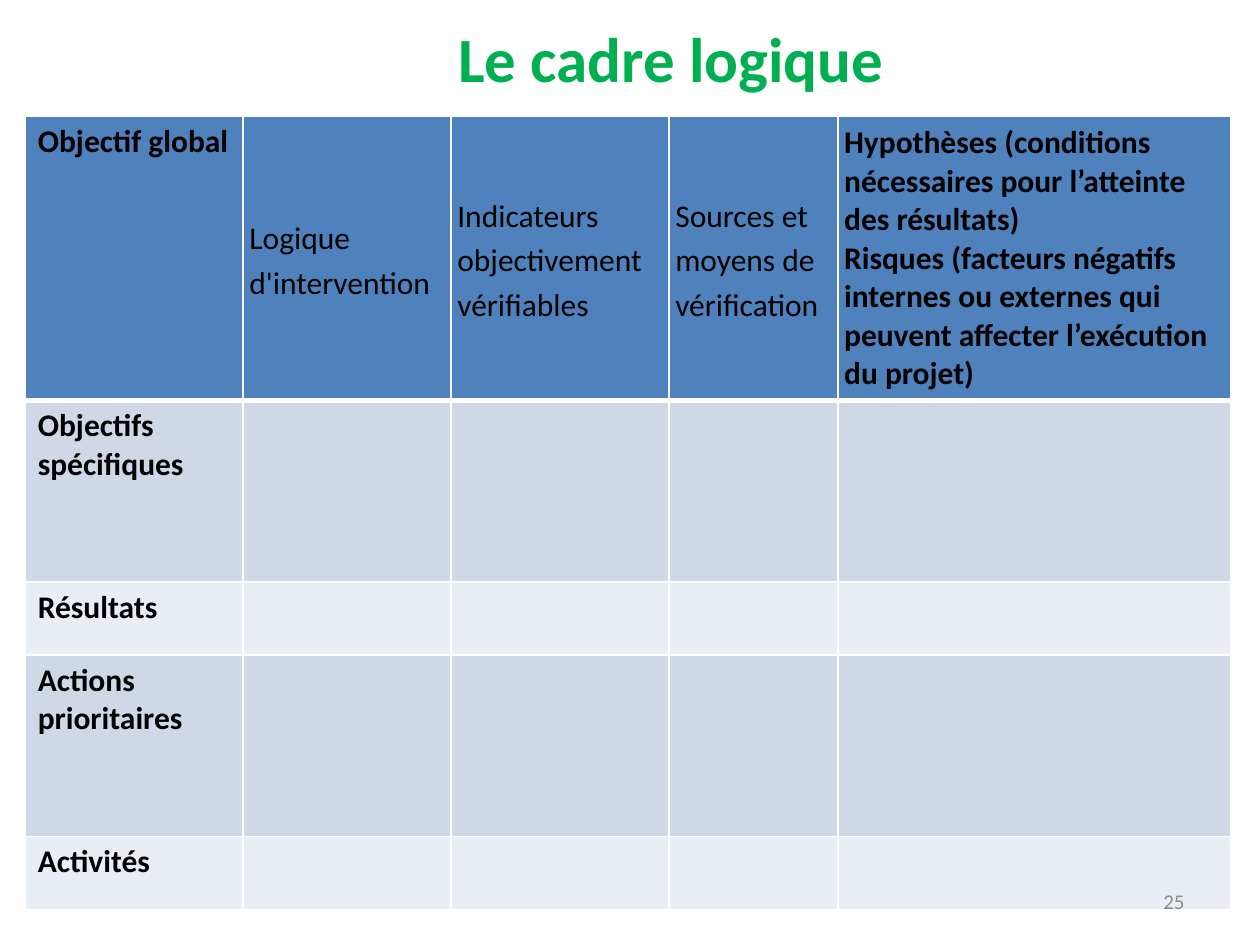
from dataclasses import dataclass

from lxml import etree
from pptx import Presentation
from pptx.dml.color import RGBColor
from pptx.enum import text
from pptx.oxml import ns
from pptx.util import Inches, Pt

COLORS = {
    "title": "00B050",
    "ink": "000000",
    "number": "8C8C8C",
    "header": "4F81BD",
    "band_dark": "D0D8E8",
    "band_light": "E9EDF4",
    "border": "FFFFFF",
}
FONT = "Calibri"
COLUMN_WIDTHS = (1.73, 1.65, 1.73, 1.34, 3.12)
ROW_HEIGHTS = (2.26, 1.44, 0.58, 1.44, 0.58)
ROW_LABELS = ("Objectif global", "Objectifs spécifiques", "Résultats",
              "Actions prioritaires", "Activités")
HEADINGS = (
    "Logique d'intervention",
    "Indicateurs objectivement vérifiables",
    "Sources et moyens de vérification",
)
ASSUMPTIONS = (
    "Hypothèses (conditions nécessaires pour l’atteinte des résultats)\n"
    "Risques (facteurs négatifs internes ou externes qui peuvent affecter "
    "l’exécution du projet)"
)


@dataclass
class Style:
    size: int = 18
    color: str = "ink"
    bold: bool = False
    align: text.PP_ALIGN = text.PP_ALIGN.LEFT
    spacing: float = 1.0


@dataclass
class Label:
    content: str
    left: float
    top: float
    width: float
    height: float
    style: Style


LABELS = (
    Label("25", 7.17, 6.95, 2.33, 0.4,
          Style(12, "number", align=text.PP_ALIGN.RIGHT)),
    Label("Le cadre logique", 0.91, 0.13, 8.83, 0.65,
          Style(36, "title", True, text.PP_ALIGN.CENTER)),
)


def rgb(name: str) -> RGBColor:
    return RGBColor.from_string(COLORS[name])


def write(frame, content: str, style: Style) -> None:
    frame.text = content
    for paragraph in frame.paragraphs:
        paragraph.alignment = style.align
        paragraph.line_spacing = style.spacing
        font = paragraph.font
        font.name, font.size, font.bold = FONT, Pt(style.size), style.bold
        font.color.rgb = rgb(style.color)


def add_label(slide, label: Label) -> None:
    box = slide.shapes.add_textbox(Inches(label.left), Inches(label.top),
                                   Inches(label.width), Inches(label.height))
    frame = box.text_frame
    frame.word_wrap = True
    frame.vertical_anchor = text.MSO_ANCHOR.MIDDLE
    write(frame, label.content, label.style)


def paint_cell(cell, fill: str, bottom: int) -> None:
    """Give the cell its borders, then its fill, in schema order."""
    properties = cell._tc.get_or_add_tcPr()
    for side, points in (("L", 1), ("R", 1), ("T", 1), ("B", bottom)):
        line = etree.SubElement(properties, ns.qn(f"a:ln{side}"), w=str(Pt(points)))
        solid = etree.SubElement(line, ns.qn("a:solidFill"))
        etree.SubElement(solid, ns.qn("a:srgbClr"), val=COLORS["border"])
    cell.fill.solid()
    cell.fill.fore_color.rgb = rgb(fill)


def write_heading(cell, content: str, style: Style) -> None:
    cell.margin_left = cell.margin_right = Inches(0.05)
    cell.margin_top = cell.margin_bottom = 0
    cell.vertical_anchor = text.MSO_ANCHOR.MIDDLE
    write(cell.text_frame, content, style)


def add_framework(slide) -> None:
    """Add the logical framework table."""
    table = slide.shapes.add_table(
        len(ROW_HEIGHTS), len(COLUMN_WIDTHS), Inches(0.2), Inches(0.92),
        Inches(sum(COLUMN_WIDTHS)), Inches(sum(ROW_HEIGHTS))).table
    table.horz_banding = False
    for column, width in zip(table.columns, COLUMN_WIDTHS):
        column.width = Inches(width)
    for index, row in enumerate(table.rows):
        row.height = Inches(ROW_HEIGHTS[index])
        band = "band_dark" if index % 2 else "band_light"
        for cell in row.cells:
            paint_cell(cell, band if index else "header", 1 if index else 3)
        write(table.cell(index, 0).text_frame, ROW_LABELS[index], Style(bold=True))
    for column, heading in enumerate(HEADINGS, start=1):
        write_heading(table.cell(0, column), heading, Style(spacing=1.15))
    write_heading(table.cell(0, len(HEADINGS) + 1), ASSUMPTIONS, Style(bold=True))


def main() -> None:
    deck = Presentation()
    deck.slide_width, deck.slide_height = Inches(10), Inches(7.5)
    slide = deck.slides.add_slide(deck.slide_layouts[6])
    add_framework(slide)
    for label in LABELS:
        add_label(slide, label)
    deck.save("out.pptx")


if __name__ == "__main__":
    main()
